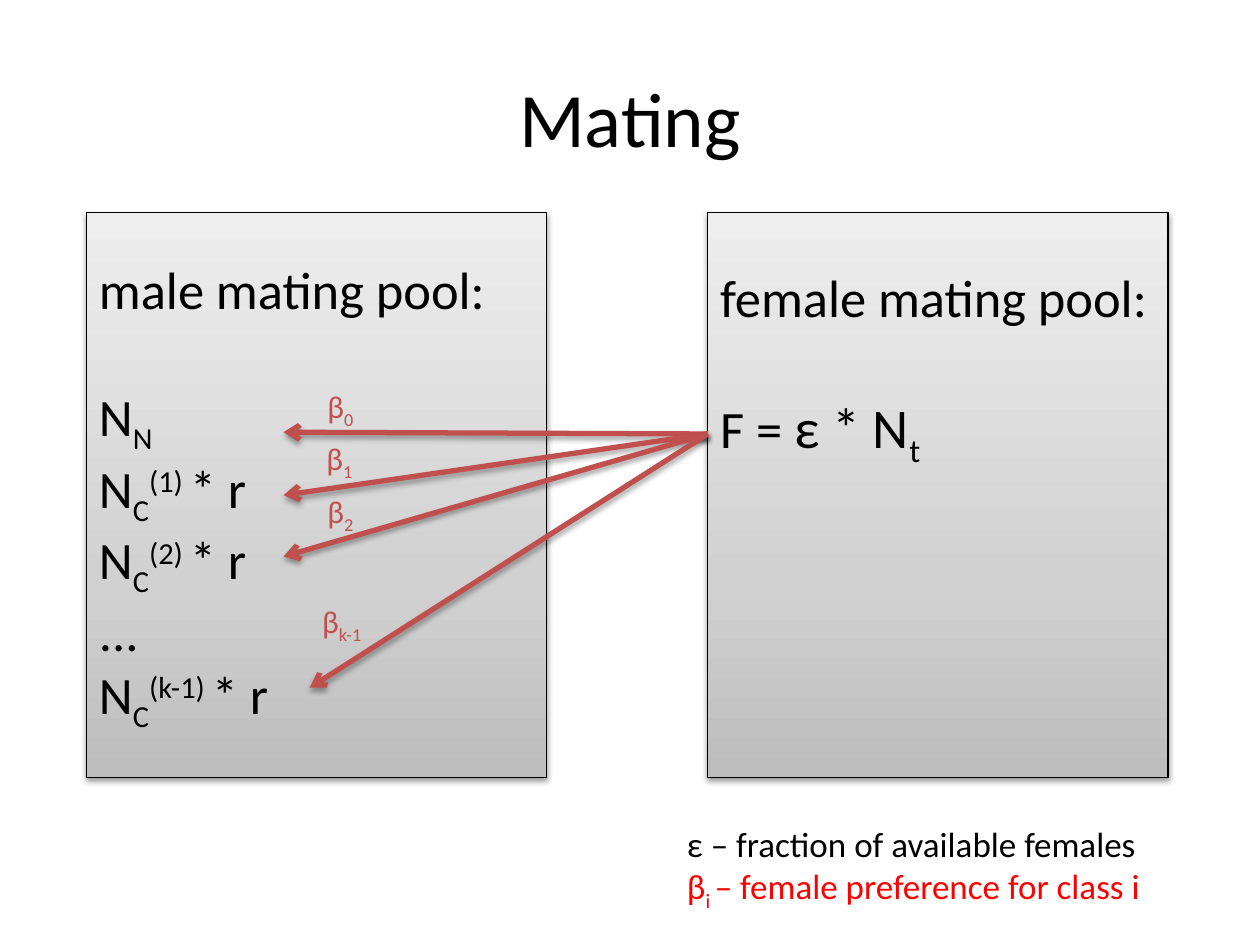
import pptx
import pptx.util
import pptx.dml.color
import pptx.enum.shapes
import pptx.enum.text
import pptx.oxml.ns
import lxml.etree
import copy

Pt = pptx.util.Pt
RGBColor = pptx.dml.color.RGBColor
Anchor = pptx.enum.text.MSO_ANCHOR
qn = pptx.oxml.ns.qn
SubElement = lxml.etree.SubElement

COLORS = {"black": "000000", "arrow": "C0504D", "red": "FF0000",
          "pool_bottom": "BDBDBD", "pool_middle": "D1D1D1", "pool_top": "EEEEEE"}
SUB, SUPER = -25, 30


def add_runs(paragraph, runs, size, color="black"):
    """Each run is (text, baseline shift in percent[, own size])."""
    for text, baseline, *own_size in runs:
        run = paragraph.add_run()
        run.text = text
        run.font.name = "Calibri"
        run.font.size = Pt(own_size[0] if own_size else size)
        run.font.color.rgb = RGBColor.from_string(COLORS[color])
        if baseline:
            run.font._element.set("baseline", str(baseline * 1000))


def add_shadow(shape, distance, opacity):
    """Soft shadow straight below the shape; call after its line is set."""
    effects = SubElement(shape._element.spPr, qn("a:effectLst"))
    shadow = SubElement(effects, qn("a:outerShdw"), blurRad=str(Pt(3.1)),
                        dist=str(Pt(distance)), dir="5400000", rotWithShape="0")
    color = SubElement(shadow, qn("a:srgbClr"), val=COLORS["black"])
    SubElement(color, qn("a:alpha"), val=str(opacity * 1000))


presentation = pptx.Presentation()
presentation.slide_width, presentation.slide_height = Pt(720), Pt(540)
slide = presentation.slides.add_slide(presentation.slide_layouts[6])

# Title
title = slide.shapes.add_textbox(Pt(36), Pt(21.6), Pt(648), Pt(90)).text_frame
title.word_wrap = True
title.vertical_anchor = Anchor.MIDDLE
title.paragraphs[0].alignment = pptx.enum.text.PP_ALIGN.CENTER
add_runs(title.paragraphs[0], [("Mating", 0)], 44)

# Mating pools: left edge, anchor, top inset, heading, lines below it
class_lines = {index: [("N", 0), ("C", SUB), (f"({index}) ", SUPER), ("* r", 0)]
               for index in ("1", "2", "k-1")}
male_lines = [[("N", 0), ("N", SUB)], class_lines["1"], class_lines["2"],
              [("...", 0)], class_lines["k-1"]]
female_lines = [[("F = ", 0), ("ε * N", 0, 32), ("t", SUB, 32)]]
pools = [(49.5, Anchor.MIDDLE, 3.6, "male mating pool:", male_lines),
         (404.5, Anchor.TOP, 30, "female mating pool:", female_lines)]
for left, anchor, top_inset, heading, lines in pools:
    pool = slide.shapes.add_shape(pptx.enum.shapes.MSO_SHAPE.RECTANGLE,
                                  Pt(left), Pt(121.5), Pt(263), Pt(323))
    pool.fill.gradient()
    pool.fill.gradient_angle = 90
    first_stop = pool._element.spPr.find(".//" + qn("a:gs"))
    first_stop.addnext(copy.deepcopy(first_stop))
    stops = [(0, "pool_bottom"), (0.35, "pool_middle"), (1, "pool_top")]
    for stop, (position, color) in zip(pool.fill.gradient_stops, stops):
        stop.position = position
        stop.color.rgb = RGBColor.from_string(COLORS[color])
    pool.line.color.rgb = RGBColor.from_string(COLORS["black"])
    pool.line.width = Pt(0.75)
    add_shadow(pool, 1.6, 38)

    frame = pool.text_frame
    frame.word_wrap = True
    frame.vertical_anchor = anchor
    frame.margin_top = Pt(top_inset)
    frame.paragraphs[0].space_after = Pt(36.6)
    add_runs(frame.paragraphs[0], [(heading, 0)], 30)
    for line in lines:
        add_runs(frame.add_paragraph(), line, 30)
    for paragraph in frame.paragraphs:
        paragraph.alignment = pptx.enum.text.PP_ALIGN.LEFT

# Preference arrows, all from the female pool
for end_x, end_y in [(162, 247), (162, 283), (162, 318), (177, 393)]:
    arrow = slide.shapes.add_connector(pptx.enum.shapes.MSO_CONNECTOR.STRAIGHT,
                                       Pt(404.5), Pt(248), Pt(end_x), Pt(end_y))
    arrow.line.color.rgb = RGBColor.from_string(COLORS["arrow"])
    arrow.line.width = Pt(3)
    SubElement(arrow.line._get_or_add_ln(), qn("a:tailEnd"), type="arrow")
    add_shadow(arrow, 1.8, 35)

# Arrow labels and legend: left, top, width, height, size, coloured lines
captions = [(left, top, width, 29, 18, [("arrow", [("β", 0), (index, SUB)])])
            for left, top, width, index in [(180, 217.5, 30.5, "0"), (179.5, 247.5, 30.5, "1"),
                                            (180, 277.5, 30.5, "2"), (177, 340.5, 39.5, "k-1")]]
captions.append((385.5, 466.5, 280, 55.5, 20, [
    ("black", [("ε – fraction of available females", 0)]),
    ("red", [("β", 0), ("i ", SUB), ("– female preference for class i", 0)])]))
for left, top, width, height, size, lines in captions:
    frame = slide.shapes.add_textbox(Pt(left), Pt(top), Pt(width), Pt(height)).text_frame
    frame.word_wrap = False
    frame.auto_size = pptx.enum.text.MSO_AUTO_SIZE.SHAPE_TO_FIT_TEXT
    for number, (color, runs) in enumerate(lines):
        paragraph = frame.add_paragraph() if number else frame.paragraphs[0]
        add_runs(paragraph, runs, size, color)

presentation.save("out.pptx")
